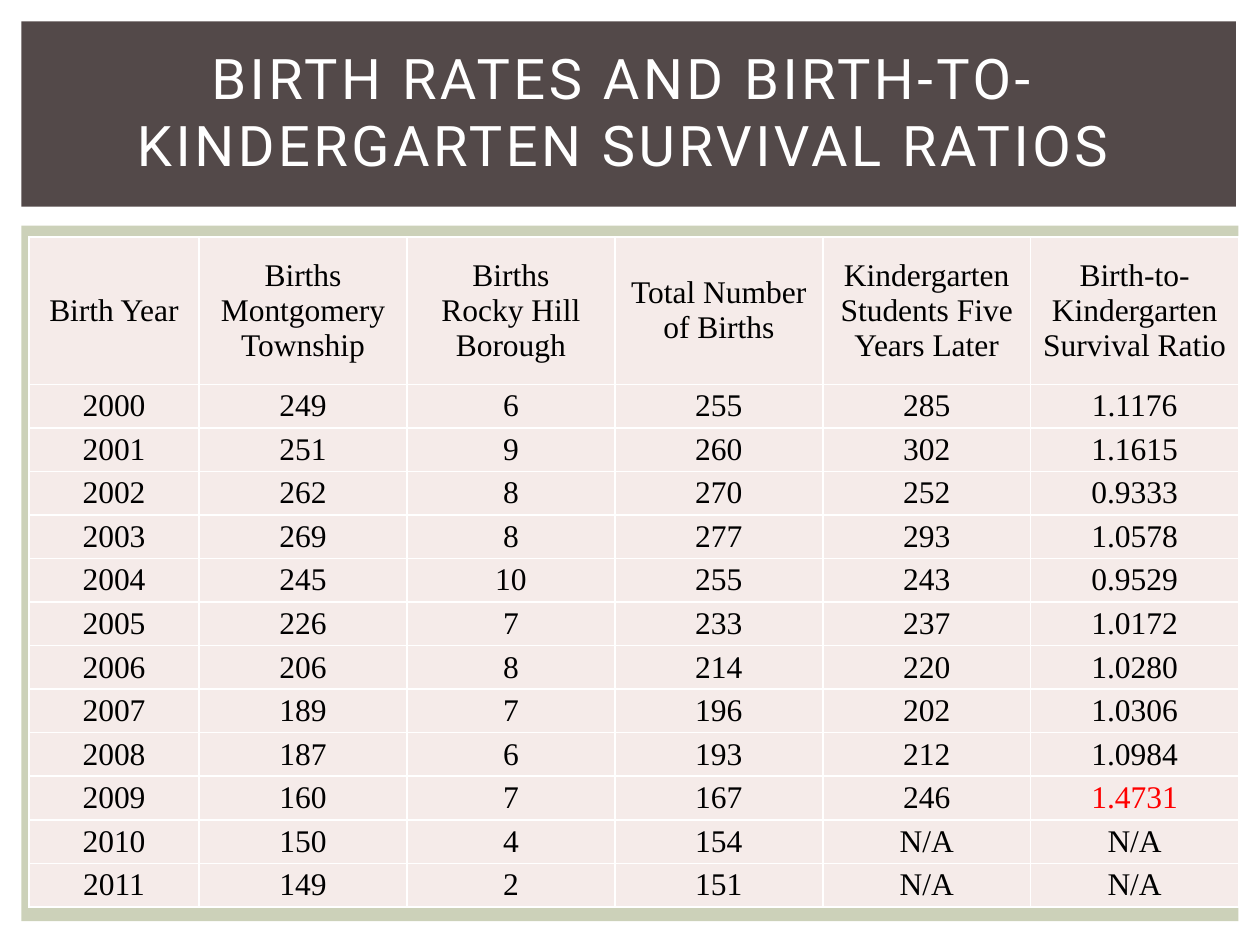
from dataclasses import dataclass

from lxml.etree import SubElement
from pptx import Presentation
from pptx.dml.color import RGBColor as RGB
from pptx.enum.shapes import MSO_SHAPE as Shape
from pptx.enum.text import MSO_ANCHOR as Anchor, PP_ALIGN as Align
from pptx.oxml.ns import qn
from pptx.util import Inches, Pt


@dataclass(frozen=True)
class Theme:
    banner: str = "534949"
    panel: str = "CCD1B9"
    cell: str = "F5EBE9"
    white: str = "FFFFFF"
    ink: str = "000000"
    alert: str = "FF0000"
    title_font: str = "Roboto"
    body_font: str = "Times New Roman"
    title_size: int = 32
    body_size: int = 18
    title_spacing: int = 2
    border: int = 1


class SlideBuilder:
    """Draws styled elements on one slide."""

    def __init__(self, slide, theme):
        self.s = slide
        self.t = theme

    def rect(self, box, color):
        sp = self.s.shapes.add_shape(Shape.RECTANGLE, *map(Inches, box))
        sp.shadow.inherit = False
        sp.fill.solid()
        sp.fill.fore_color.rgb = RGB.from_string(color)
        sp.line.fill.background()

    def run(self, p, text, font, size, color):
        p.alignment = Align.CENTER
        r = p.add_run()
        r.text = text
        r.font.name = font
        r.font.size = Pt(size)
        r.font.color.rgb = RGB.from_string(color)
        return r

    def title(self, box, text):
        tf = self.s.shapes.add_textbox(*map(Inches, box)).text_frame
        tf.word_wrap = True
        tf.vertical_anchor = Anchor.MIDDLE
        r = self.run(tf.paragraphs[0], text, self.t.title_font,
                     self.t.title_size, self.t.white)
        r.font._element.set("spc", str(self.t.title_spacing * 100))

    def borders(self, cell):
        tc_pr = cell._tc.get_or_add_tcPr()
        for side in ("lnL", "lnR", "lnT", "lnB"):
            ln = SubElement(tc_pr, qn(f"a:{side}"), w=str(Pt(self.t.border)))
            fill = SubElement(ln, qn("a:solidFill"))
            SubElement(fill, qn("a:srgbClr"), val=self.t.white)

    def cell(self, cell, text, color):
        cell.margin_left = cell.margin_right = Inches(0.02)
        cell.margin_top = cell.margin_bottom = 0
        cell.vertical_anchor = Anchor.MIDDLE
        self.borders(cell)
        cell.fill.solid()
        cell.fill.fore_color.rgb = RGB.from_string(self.t.cell)
        tf = cell.text_frame
        for i, line in enumerate(text.split("\n")):
            p = tf.add_paragraph() if i else tf.paragraphs[0]
            self.run(p, line, self.t.body_font, self.t.body_size, color)

    def table(self, left, top, widths, heights, rows, alerts):
        box = map(Inches, (left, top, sum(widths), sum(heights)))
        frame = self.s.shapes.add_table(len(rows), len(widths), *box)
        tbl = frame.table
        tbl.first_row = tbl.horz_banding = False
        for col, width in zip(tbl.columns, widths):
            col.width = Inches(width)
        for row, height, texts in zip(tbl.rows, heights, rows):
            row.height = Inches(height)
            for cell, text in zip(row.cells, texts):
                color = self.t.alert if text in alerts else self.t.ink
                self.cell(cell, text, color)


HEADER = (
    "Birth Year",
    "Births\nMontgomery Township",
    "Births\nRocky Hill Borough",
    "Total Number\nof Births",
    "Kindergarten Students Five Years Later",
    "Birth-to-Kindergarten Survival Ratio",
)
FIRST_YEAR = 2000
TOWNSHIP = (249, 251, 262, 269, 245, 226, 206, 189, 187, 160, 150, 149)
BOROUGH = (6, 9, 8, 8, 10, 7, 8, 7, 6, 7, 4, 2)
STUDENTS = (285, 302, 252, 293, 243, 237, 220, 202, 212, 246, None, None)


def survival_rows():
    rows = [HEADER]
    counts = zip(TOWNSHIP, BOROUGH, STUDENTS)
    for year, (township, borough, students) in enumerate(counts, FIRST_YEAR):
        total = township + borough
        outcome = ("N/A", "N/A")
        if students is not None:
            outcome = (str(students), f"{students / total:.4f}")
        rows.append((str(year), str(township), str(borough), str(total), *outcome))
    return rows


def main():
    prs = Presentation()
    prs.slide_width, prs.slide_height = Inches(10), Inches(7.5)
    theme = Theme()
    s = SlideBuilder(prs.slides.add_slide(prs.slide_layouts[6]), theme)
    s.rect((0.17, 1.79, 9.66, 5.52), theme.panel)
    s.rect((0.17, 0.17, 9.64, 1.47), theme.banner)
    s.title((0.14, 0, 9.61, 1.75),
            "BIRTH RATES AND BIRTH-TO-KINDERGARTEN SURVIVAL RATIOS")
    rows = survival_rows()
    widths = [1.35] + [1.65] * (len(HEADER) - 1)
    heights = [1.17] + [4.15 / len(TOWNSHIP)] * len(TOWNSHIP)
    s.table(0.23, 1.88, widths, heights, rows, alerts={"1.4731"})
    prs.save("out.pptx")


if __name__ == "__main__":
    main()
